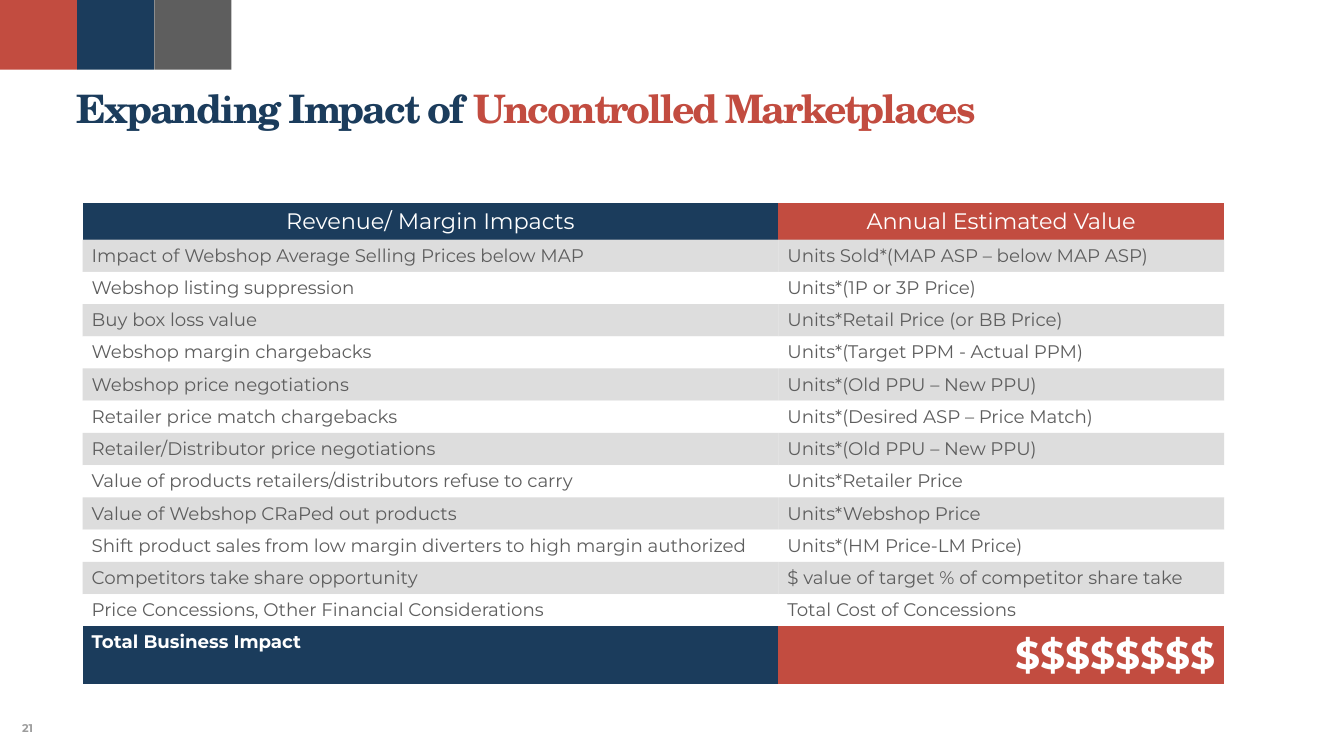
from lxml import etree
from pptx import Presentation
from pptx.dml import color
from pptx.enum import shapes, text
from pptx.oxml import ns
from pptx.util import Inches, Pt

COLOURS = {
    "red": "C24C40",
    "navy": "1B3C5C",
    "grey": "5E5E5E",
    "band": "D9D9D9",
    "white": "FFFFFF",
    "number": "9D9D9D",
}
BODY_FONT = "Montserrat"
TITLE_FONT = "TeX Gyre Schola"
PLAIN_TABLE_STYLE = "{2D5ABB26-0587-4C30-8999-92F81FD0307C}"
COLUMN_WIDTHS = (6.9, 4.42)
HEADER_HEIGHT, ROW_HEIGHT, TOTAL_HEIGHT = 0.36, 0.32, 0.57

HEADINGS = ("Revenue/ Margin Impacts", "Annual Estimated Value")
IMPACTS = [
    ("Impact of Webshop Average Selling Prices below MAP", "Units Sold*(MAP ASP – below MAP ASP)"),
    ("Webshop listing suppression", "Units*(1P or 3P Price)"),
    ("Buy box loss value", "Units*Retail Price (or BB Price)"),
    ("Webshop margin chargebacks", "Units*(Target PPM - Actual PPM)"),
    ("Webshop price negotiations", "Units*(Old PPU – New PPU)"),
    ("Retailer price match chargebacks", "Units*(Desired ASP – Price Match)"),
    ("Retailer/Distributor price negotiations", "Units*(Old PPU – New PPU)"),
    ("Value of products retailers/distributors refuse to carry", "Units*Retailer Price"),
    ("Value of Webshop CRaPed out products", "Units*Webshop Price"),
    ("Shift product sales from low margin diverters to high margin authorized", "Units*(HM Price-LM Price)"),
    ("Competitors take share opportunity", "$ value of target % of competitor share take"),
    ("Price Concessions, Other Financial Considerations", "Total Cost of Concessions"),
]
TOTAL = ("Total Business Impact", "$$$$$$$$")


def set_fill(target, name, alpha=None):
    target.fill.solid()
    target.fill.fore_color.rgb = color.RGBColor.from_string(COLOURS[name])
    if alpha is not None:
        tint = next(target.fill._xPr.iter(ns.qn("a:srgbClr")))
        etree.SubElement(tint, ns.qn("a:alpha")).set("val", str(alpha * 1000))


def add_span(para, words, size, name, font=BODY_FONT, bold=False, spacing=None):
    span = para.add_run()
    span.text = words
    span.font.size = Pt(size)
    span.font.name = font
    span.font.bold = bold
    span.font.color.rgb = color.RGBColor.from_string(COLOURS[name])
    if spacing is not None:
        span.font._element.set("spc", str(round(spacing * 100)))


def add_corner_blocks(page):
    for index, name in enumerate(("red", "navy", "grey")):
        block = page.shapes.add_shape(
            shapes.MSO_SHAPE.RECTANGLE,
            Inches(index * 0.765), Inches(0), Inches(0.765), Inches(0.69),
        )
        block.shadow.inherit = False
        block.line.fill.background()
        set_fill(block, name)


def add_title(page):
    box = page.shapes.add_textbox(Inches(0.76), Inches(0.89), Inches(12.41), Inches(0.45))
    frame = box.text_frame
    frame.word_wrap = True
    frame.margin_left = frame.margin_right = frame.margin_top = frame.margin_bottom = 0
    para = frame.paragraphs[0]
    para.line_spacing = 0.9
    for words, name in (("Expanding Impact of ", "navy"), ("Uncontrolled Marketplaces", "red")):
        add_span(para, words, 28, name, TITLE_FONT, True, -1.5)


def add_page_number(page):
    box = page.shapes.add_textbox(Inches(0.12), Inches(7.09), Inches(0.79), Inches(0.26))
    box.text_frame.word_wrap = True
    box.text_frame.vertical_anchor = text.MSO_ANCHOR.MIDDLE
    add_span(box.text_frame.paragraphs[0], "21", 8, "number", bold=True)


def fill_cell(cell, words, size, ink, fill, alpha=None, align=text.PP_ALIGN.LEFT, bold=False):
    cell.margin_left = cell.margin_right = Inches(0.09)
    cell.margin_top = cell.margin_bottom = Inches(0.05)
    set_fill(cell, fill, alpha)
    para = cell.text_frame.paragraphs[0]
    para.alignment = align
    add_span(para, words, size, ink, bold=bold)


def add_impact_table(page):
    heights = [HEADER_HEIGHT] + [ROW_HEIGHT] * len(IMPACTS) + [TOTAL_HEIGHT]
    frame = page.shapes.add_table(
        len(heights), len(COLUMN_WIDTHS),
        Inches(0.82), Inches(2.01), Inches(sum(COLUMN_WIDTHS)), Inches(sum(heights)),
    )
    table = frame.table
    table.horz_banding = False
    table._tbl.tblPr.find(ns.qn("a:tableStyleId")).text = PLAIN_TABLE_STYLE
    for column, width in zip(table.columns, COLUMN_WIDTHS):
        column.width = Inches(width)
    for row, height in zip(table.rows, heights):
        row.height = Inches(height)

    for column, (words, fill) in enumerate(zip(HEADINGS, ("navy", "red"))):
        fill_cell(table.cell(0, column), words, 16, "white", fill, align=text.PP_ALIGN.CENTER)
    for row, impact in enumerate(IMPACTS, start=1):
        for column, words in enumerate(impact):
            fill_cell(table.cell(row, column), words, 13, "grey", "band" if row % 2 else "white", 89)
    last = len(heights) - 1
    fill_cell(table.cell(last, 0), TOTAL[0], 13, "white", "navy", bold=True)
    fill_cell(table.cell(last, 1), TOTAL[1], 28, "white", "red", align=text.PP_ALIGN.RIGHT, bold=True)


def main():
    deck = Presentation()
    deck.slide_width = Inches(13.33)
    deck.slide_height = Inches(7.5)
    page = deck.slides.add_slide(deck.slide_layouts[6])
    add_corner_blocks(page)
    add_page_number(page)
    add_title(page)
    add_impact_table(page)
    deck.save("out.pptx")


if __name__ == "__main__":
    main()
